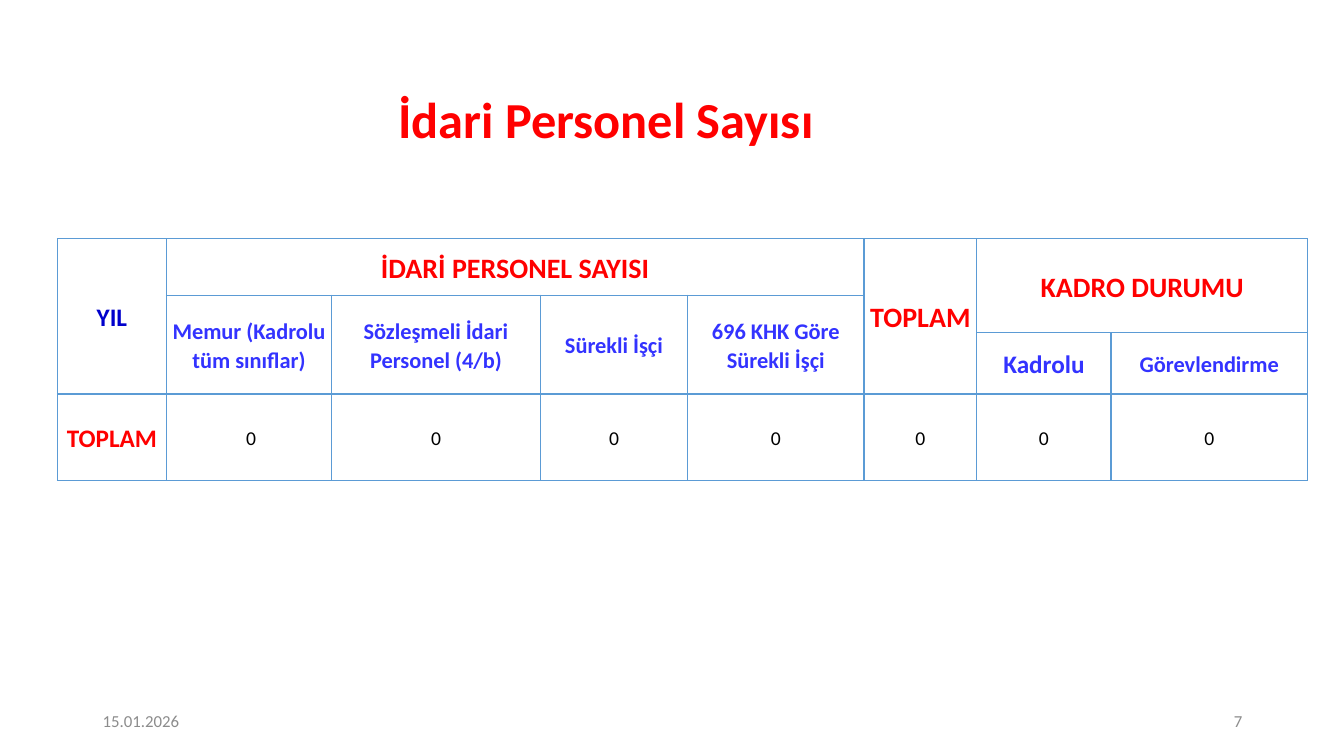
from lxml import etree
from pptx import Presentation
from pptx.dml.color import RGBColor
from pptx.enum.text import MSO_ANCHOR, PP_ALIGN
from pptx.oxml.ns import qn
from pptx.util import Inches, Pt

MIDDLE = MSO_ANCHOR.MIDDLE
LEFT, CENTER, RIGHT = PP_ALIGN.LEFT, PP_ALIGN.CENTER, PP_ALIGN.RIGHT
RED = RGBColor(0xFF, 0x00, 0x00)
NAVY = RGBColor(0x00, 0x00, 0xCC)
BLUE = RGBColor(0x33, 0x33, 0xFF)
BLACK = RGBColor(0x00, 0x00, 0x00)
GREY = RGBColor(0x8C, 0x8C, 0x8C)
BORDER = RGBColor(0x5B, 0x9B, 0xD5)
FONT = "Calibri"

TEXTS = [
    ("İdari Personel Sayısı", (0.37, 0.83, 11.28, 0.76), CENTER, 36, RED, True, 0.9),
    ("15.01.2026", (0.92, 6.95, 3, 0.4), LEFT, 12, GREY, False, 1),
    ("7", (9.42, 6.95, 3, 0.4), RIGHT, 12, GREY, False, 1),
]
TABLE_LEFT, TABLE_TOP = 0.57, 2.37
COLUMNS = [1.08, 1.64, 2.07, 1.46, 1.75, 1.12, 1.33, 1.95]
ROWS = [0.56, 0.37, 0.61, 0.86]
HEADERS = [
    (0, 0, 3, 1, "YIL", 18, NAVY),
    (0, 1, 1, 4, "İDARİ PERSONEL SAYISI", 20, RED),
    (0, 5, 3, 1, "TOPLAM", 20, RED),
    (0, 6, 2, 2, "KADRO DURUMU", 20, RED),
    (1, 1, 2, 1, "Memur (Kadrolu tüm sınıflar)", 16, BLUE),
    (1, 2, 2, 1, "Sözleşmeli İdari Personel (4/b)", 16, BLUE),
    (1, 3, 2, 1, "Sürekli İşçi", 16, BLUE),
    (1, 4, 2, 1, "696 KHK Göre Sürekli İşçi", 16, BLUE),
    (2, 6, 1, 1, "Kadrolu", 18, BLUE),
    (2, 7, 1, 1, "Görevlendirme", 16, BLUE),
    (3, 0, 1, 1, "TOPLAM", 18, RED),
]
TOTALS = [" 0", "0", "0", "0", "0", "0", "0"]


def write(frame, text, align, size, color, bold, spacing):
    para = frame.paragraphs[0]
    para.alignment = align
    para.line_spacing = spacing
    span = para.add_run()
    span.text = text
    span.font.name = FONT
    span.font.size = Pt(size)
    span.font.bold = bold
    span.font.color.rgb = color


def add_text(page, text, place, *style):
    box = page.shapes.add_textbox(*map(Inches, place))
    box.text_frame.word_wrap = True
    box.text_frame.vertical_anchor = MIDDLE
    write(box.text_frame, text, *style)


def style_cell(cell):
    cell.margin_left = cell.margin_right = cell.margin_top = Inches(0.01)
    cell.margin_bottom = 0
    cell.vertical_anchor = MIDDLE
    cell.fill.background()
    properties = cell._tc.get_or_add_tcPr()
    for index, side in enumerate(("a:lnL", "a:lnR", "a:lnT", "a:lnB")):
        line = etree.Element(qn(side), w=str(Pt(1)))
        fill = etree.SubElement(line, qn("a:solidFill"))
        etree.SubElement(fill, qn("a:srgbClr"), val=str(BORDER))
        properties.insert(index, line)


def add_staff_table(page):
    frame = page.shapes.add_table(
        len(ROWS), len(COLUMNS), Inches(TABLE_LEFT), Inches(TABLE_TOP),
        Inches(sum(COLUMNS)), Inches(sum(ROWS)))
    table = frame.table
    table.first_row = table.horz_banding = False
    for column, width in zip(table.columns, COLUMNS):
        column.width = Inches(width)
    for row, height in zip(table.rows, ROWS):
        row.height = Inches(height)
    for cell in table.iter_cells():
        style_cell(cell)
    for row, column, height, width, text, size, color in HEADERS:
        cell = table.cell(row, column)
        if height * width > 1:
            cell.merge(table.cell(row + height - 1, column + width - 1))
        write(cell.text_frame, text, CENTER, size, color, True, 1.07)
    for column, total in enumerate(TOTALS, start=1):
        write(table.cell(len(ROWS) - 1, column).text_frame, total, CENTER, 14, BLACK, False, 1.07)


def main():
    deck = Presentation()
    deck.slide_width, deck.slide_height = Inches(13.33), Inches(7.5)
    page = deck.slides.add_slide(deck.slide_layouts[6])
    for item in TEXTS:
        add_text(page, *item)
    add_staff_table(page)
    deck.save("out.pptx")


if __name__ == "__main__":
    main()
